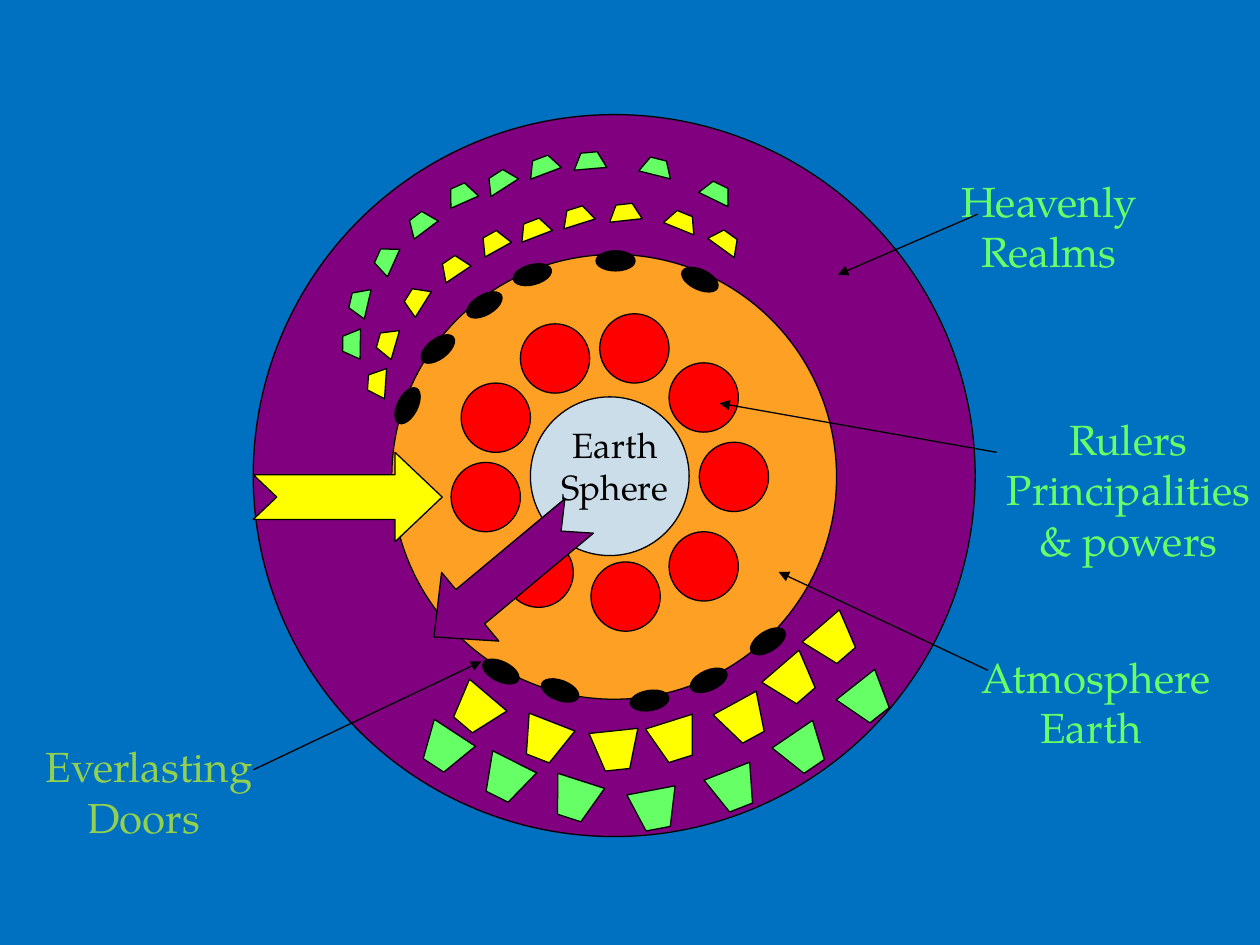
from typing import NamedTuple

from lxml.etree import SubElement
from pptx import Presentation
from pptx.dml.color import RGBColor
from pptx.enum.shapes import MSO_CONNECTOR as Connector, MSO_SHAPE as Preset
from pptx.enum.text import MSO_AUTO_SIZE as AutoSize, PP_ALIGN as Align
from pptx.oxml.ns import qn
from pptx.util import Cm, Pt

FONT = "TeX Gyre Pagella"
BLACK, RED, YELLOW, GREEN, PURPLE = "000000", "FF0000", "FFFF00", "66FF66", "800080"


class Circle(NamedTuple):
    left: float
    top: float
    size: float
    fill: str


class Turned(NamedTuple):
    left: float
    top: float
    angle: float


class StoneRow(NamedTuple):
    width: float
    height: float
    fill: str
    stones: list[Turned]


class Label(NamedTuple):
    left: float
    top: float
    width: float
    height: float
    lines: list[str]
    size: int
    color: str


class Pointer(NamedTuple):
    x1: float
    y1: float
    x2: float
    y2: float


SPHERES = [
    Circle(2.01, 0.91, 5.73, PURPLE),
    Circle(3.11, 2.02, 3.53, "FDA023"),
    Circle(4.21, 3.15, 1.26, "CCDDEA"),
]
RULERS = [
    Circle(left, top, 0.55, RED)
    for left, top in [
        (4.76, 2.49), (4.13, 2.57), (3.66, 3.04), (3.58, 3.67), (4, 4.27),
        (4.69, 4.46), (5.31, 2.88), (5.55, 3.51), (5.31, 4.22),
    ]
]
LABELS = [
    Label(7.52, 5.17, 2.28, 0.81, [" Atmosphere Earth"], 24, GREEN),
    Label(7.91, 3.28, 2.09, 1.21, ["Rulers Principalities & powers"], 24, GREEN),
    Label(4.29, 3.36, 1.18, 0.67, ["Earth", "Sphere"], 20, BLACK),
    Label(7.36, 1.39, 1.93, 0.81, ["Heavenly", "Realms"], 24, GREEN),
    Label(0, 5.88, 2.28, 0.81, [" Everlasting Doors"], 24, "92D050"),
]
POINTERS = [
    Pointer(7.84, 5.32, 6.18, 4.54),
    Pointer(7.76, 1.7, 6.65, 2.18),
    Pointer(7.91, 3.59, 5.71, 3.2),
    Pointer(2.01, 6.11, 3.82, 5.25),
]
STONE_ROWS = [
    StoneRow(0.26, 0.13, YELLOW, [
        Turned(5.63, 1.85, 216), Turned(5.28, 1.69, 202), Turned(4.83, 1.62, 173.7),
        Turned(4.45, 1.65, 162.5), Turned(4.11, 1.75, 159),
    ]),
    StoneRow(0.24, 0.14, YELLOW, [
        Turned(3.8, 1.85, 151), Turned(3.48, 2.05, 146.1), Turned(3.18, 2.31, 122),
        Turned(2.95, 2.65, 106.1), Turned(2.87, 2.97, 93.9),
    ]),
    StoneRow(0.26, 0.13, GREEN, [
        Turned(5.56, 1.46, 206), Turned(5.08, 1.26, 194), Turned(4.55, 1.21, 175),
        Turned(4.18, 1.25, 159.4), Turned(3.84, 1.37, 147.2),
    ]),
    StoneRow(0.24, 0.14, GREEN, [
        Turned(3.54, 1.47, 156), Turned(3.22, 1.7, 143), Turned(2.94, 1.99, 114.2),
        Turned(2.73, 2.33, 103), Turned(2.67, 2.66, 90.9),
    ]),
    StoneRow(0.39, 0.31, YELLOW, [
        Turned(3.58, 5.48, 40.3), Turned(4.13, 5.72, 21.3), Turned(5.16, 5.72, 342.5),
        Turned(5.71, 5.56, 331.3), Turned(6.1, 5.25, 319.2), Turned(4.69, 5.8, 354),
        Turned(6.42, 4.93, 319.2),
    ]),
    StoneRow(0.39, 0.31, GREEN, [
        Turned(3.33, 5.79, 33.2), Turned(4.37, 6.19, 17.9), Turned(5.63, 6.11, 338.6),
        Turned(6.18, 5.8, 325.8), Turned(6.69, 5.4, 321.7), Turned(5, 6.27, 349.3),
        Turned(3.82, 6.03, 26.7),
    ]),
]
DOORS = [
    Turned(3.82, 5.25, 25.6), Turned(4.29, 5.4, 20.5), Turned(5, 5.48, 350.9),
    Turned(5.47, 5.32, 335.9), Turned(5.94, 5.01, 327.9), Turned(5.4, 2.14, 25),
    Turned(4.73, 1.99, 180), Turned(4.07, 2.1, 345), Turned(3.69, 2.34, 330),
    Turned(3.32, 2.69, 323), Turned(3.08, 3.14, 297),
]


def inch(value: float) -> Cm:
    return Cm(value * 2.54)


def rgb(color: str) -> RGBColor:
    return RGBColor.from_string(color)


def paint(shape, fill: str, angle: float = 0) -> None:
    shape.shadow.inherit = False
    shape.fill.solid()
    shape.fill.fore_color.rgb = rgb(fill)
    shape.line.color.rgb = rgb(BLACK)
    shape.line.width = Pt(0.75)
    shape.rotation = angle


def draw_circle(page, circle: Circle) -> None:
    left, top, size = map(inch, circle[:3])
    paint(page.shapes.add_shape(Preset.OVAL, left, top, size, size), circle.fill)


def draw_door(page, door: Turned) -> None:
    frame = map(inch, (door.left, door.top, 0.31, 0.16))
    paint(page.shapes.add_shape(Preset.OVAL, *frame), BLACK, door.angle)


def draw_arrow(page, arrow: Turned, fill: str) -> None:
    frame = map(inch, (arrow.left, arrow.top, 1.5, 0.71))
    shape = page.shapes.add_shape(Preset.NOTCHED_RIGHT_ARROW, *frame)
    shape.adjustments[0], shape.adjustments[1] = 0.5, 0.527
    paint(shape, fill, arrow.angle)


def draw_stone(page, row: StoneRow, stone: Turned) -> None:
    width, height = inch(row.width), inch(row.height)
    outline = page.shapes.build_freeform(0, 0)
    outline.add_line_segments([(width / 4, height), (width * 3 / 4, height), (width, 0)])
    shape = outline.convert_to_shape(inch(stone.left), inch(stone.top))
    paint(shape, row.fill, stone.angle)


def draw_label(page, label: Label) -> None:
    box = page.shapes.add_textbox(*map(inch, label[:4]))
    frame = box.text_frame
    frame.word_wrap = True
    frame.auto_size = AutoSize.SHAPE_TO_FIT_TEXT
    frame.margin_left = frame.margin_right = frame.margin_top = frame.margin_bottom = 0
    para = frame.paragraphs[0]
    para.alignment = Align.CENTER
    for number, line in enumerate(label.lines):
        if number:
            para.add_line_break()
        span = para.add_run()
        span.text = line
        span.font.name = FONT
        span.font.size = Pt(label.size)
        span.font.color.rgb = rgb(label.color)


def draw_pointer(page, pointer: Pointer) -> None:
    line = page.shapes.add_connector(Connector.STRAIGHT, *map(inch, pointer))
    line.line.color.rgb = rgb(BLACK)
    line.line.width = Pt(0.75)
    SubElement(line.line._get_or_add_ln(), qn("a:tailEnd"), type="triangle")
    SubElement(line._element.spPr, qn("a:effectLst"))


def main() -> None:
    """Build the slide of the heavenly realms around the earth sphere."""
    deck = Presentation()
    deck.slide_width, deck.slide_height = inch(10), inch(7.5)
    page = deck.slides.add_slide(deck.slide_layouts[6])
    page.background.fill.solid()
    page.background.fill.fore_color.rgb = rgb("0070C0")
    for circle in SPHERES + RULERS:
        draw_circle(page, circle)
    for label in LABELS:
        draw_label(page, label)
    draw_arrow(page, Turned(2.01, 3.59, 0), YELLOW)
    for pointer in POINTERS:
        draw_pointer(page, pointer)
    draw_arrow(page, Turned(3.27, 4.22, 140.2), PURPLE)
    for row in STONE_ROWS:
        for stone in row.stones:
            draw_stone(page, row, stone)
    for door in DOORS:
        draw_door(page, door)
    deck.save("out.pptx")


if __name__ == "__main__":
    main()
